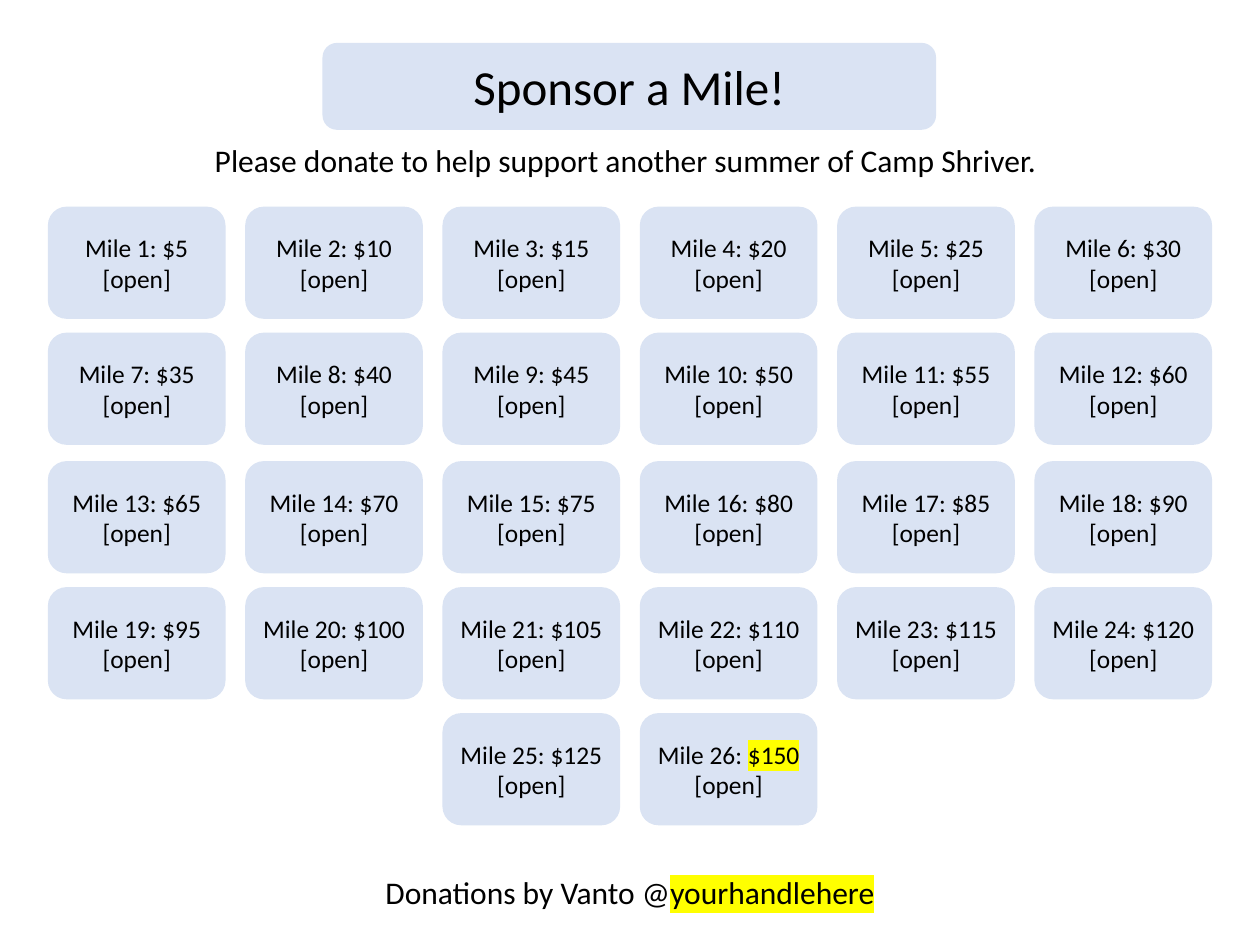
from dataclasses import dataclass

from lxml import etree
from pptx import Presentation
from pptx.dml.color import RGBColor
from pptx.enum.shapes import MSO_SHAPE
from pptx.enum.text import MSO_ANCHOR, MSO_AUTO_SIZE, PP_ALIGN
from pptx.oxml.ns import qn
from pptx.util import Inches, Pt

ROUNDED = MSO_SHAPE.ROUNDED_RECTANGLE
CENTER = PP_ALIGN.CENTER
MIDDLE = MSO_ANCHOR.MIDDLE
GROW = MSO_AUTO_SIZE.SHAPE_TO_FIT_TEXT


@dataclass(frozen=True)
class Theme:
    font: str = "Calibri"
    ink: str = "000000"
    tile: str = "DAE3F3"
    marker: str = "FFFF00"
    title_size: float = 28
    body_size: float = 18
    tile_size: float = 14.5


THEME = Theme()

# Mile grid, in inches
SLIDE_WIDTH, SLIDE_HEIGHT = 10, 7.5
MARGIN = 0.38
COLUMNS = 6
TILE_WIDTH, TILE_HEIGHT = 1.41, 0.89
COLUMN_STEP = (SLIDE_WIDTH - 2 * MARGIN - TILE_WIDTH) / (COLUMNS - 1)
ROW_TOPS = (1.64, 2.64, 3.66, 4.66, 5.66)

# Miles and prices
MILES = 26
PRICE_STEP = 5
FINAL_PRICE = 150


def add_span(para, text, size, marked=False):
    span = para.add_run()
    span.text = text
    span.font.size = Pt(size)
    span.font.color.rgb = RGBColor.from_string(THEME.ink)
    if marked:
        properties = span.font._element
        highlight = etree.SubElement(properties, qn("a:highlight"))
        etree.SubElement(highlight, qn("a:srgbClr"), val=THEME.marker)
    span.font.name = THEME.font


def write_lines(frame, lines, size):
    """Each line is a list of (text, marked) spans."""
    frame.word_wrap = True
    for index, spans in enumerate(lines):
        para = frame.add_paragraph() if index else frame.paragraphs[0]
        para.alignment = CENTER
        for text, marked in spans:
            add_span(para, text, size, marked)


def add_tile(page, left, top, width, height, lines, size):
    tile = page.shapes.add_shape(
        ROUNDED, Inches(left), Inches(top), Inches(width), Inches(height))
    tile.shadow.inherit = False
    tile.fill.solid()
    tile.fill.fore_color.rgb = RGBColor.from_string(THEME.tile)
    tile.line.fill.background()
    tile.text_frame.vertical_anchor = MIDDLE
    write_lines(tile.text_frame, lines, size)


def add_caption(page, left, top, width, spans):
    box = page.shapes.add_textbox(
        Inches(left), Inches(top), Inches(width), Inches(0.4))
    write_lines(box.text_frame, [spans], THEME.body_size)
    box.text_frame.auto_size = GROW


def add_mile(page, mile):
    row, column = divmod(mile - 1, COLUMNS)
    # The short last row is centred under the full ones
    in_row = min(COLUMNS, MILES - row * COLUMNS)
    column += (COLUMNS - in_row) / 2
    is_final = mile == MILES
    price = FINAL_PRICE if is_final else mile * PRICE_STEP
    if is_final:
        heading = [(f"Mile {mile}: ", False), (f"${price}", True)]
    else:
        heading = [(f"Mile {mile}: ${price}", False)]
    add_tile(page, MARGIN + column * COLUMN_STEP, ROW_TOPS[row],
             TILE_WIDTH, TILE_HEIGHT,
             [heading, [("[open]", False)]], THEME.tile_size)


def main():
    deck = Presentation()
    deck.slide_width = Inches(SLIDE_WIDTH)
    deck.slide_height = Inches(SLIDE_HEIGHT)
    page = deck.slides.add_slide(deck.slide_layouts[6])

    # Title and appeal
    add_tile(page, 2.56, 0.34, 4.87, 0.69,
             [[("Sponsor a Mile!", False)]], THEME.title_size)
    add_caption(page, 1.38, 1.07, 7.23, [
        ("Please donate to help support another summer of Camp Shriver. ",
         False)])

    # Mile tiles
    for mile in range(1, MILES + 1):
        add_mile(page, mile)

    # Payment line
    add_caption(page, SLIDE_WIDTH / 4, 6.88, SLIDE_WIDTH / 2, [
        ("Donations by Vanto @", False), ("yourhandlehere", True)])

    deck.save("out.pptx")


if __name__ == "__main__":
    main()
